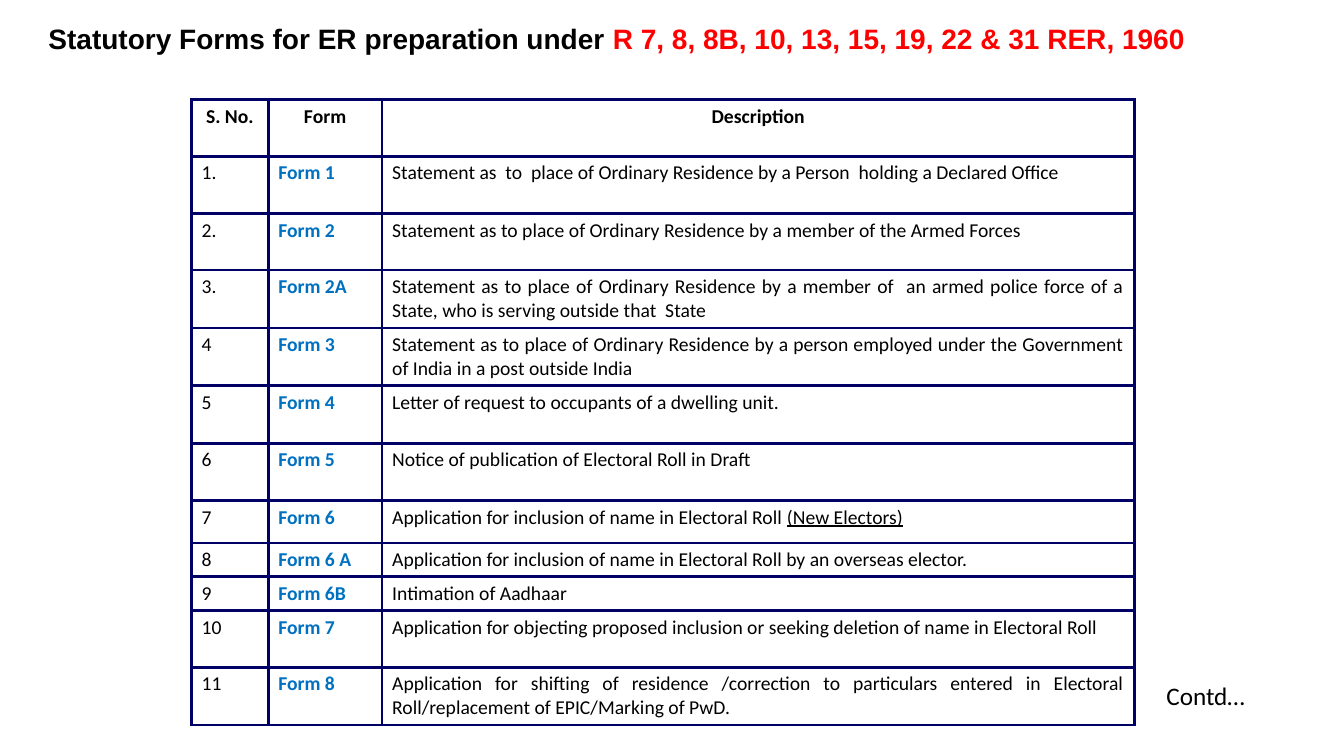
"""Build the slide of statutory forms for electoral roll preparation."""
from lxml import etree
from pptx import Presentation, util as u
from pptx.dml.color import RGBColor
from pptx.enum import text as t
from pptx.oxml.ns import qn

PX = 9144
COLORS = {"ink": "000000", "form": "0070C0", "rule": "000066", "rules": "FF0000"}
TITLE = [
    ("Statutory Forms for ER preparation under ", "ink"),
    ("R 7, 8, 8B, 10, 13, 15, 19, 22 & 31 RER, 1960", "rules"),
]
HEADS = ("S. No.", "Form", "Description")
FORMS = [
    ("1.", "Form 1", "Statement as  to  place of Ordinary Residence by a Person  holding a Declared Office"),
    ("2.", "Form 2", "Statement as to place of Ordinary Residence by a member of the Armed Forces"),
    ("3.", "Form 2A", "Statement as to place of Ordinary Residence by a member of  an armed police force "
     "of a State, who is serving outside that  State"),
    ("4", "Form 3", "Statement as to place of Ordinary Residence by a person employed under the "
     "Government of India in a post outside India"),
    ("5", "Form 4", "Letter of request to occupants of a dwelling unit."),
    ("6", "Form 5", "Notice of publication of Electoral Roll in Draft"),
    ("7", "Form 6", "Application for inclusion of name in Electoral Roll ", "(New Electors)"),
    ("8", "Form 6 A", "Application for inclusion of name in Electoral Roll by an overseas elector."),
    ("9", "Form 6B", "Intimation of Aadhaar"),
    ("10", "Form 7", "Application for objecting proposed inclusion or seeking deletion of name in "
     "Electoral Roll"),
    ("11", "Form 8", "Application for shifting of residence /correction to particulars entered in "
     "Electoral Roll/replacement of EPIC/Marking of PwD."),
]
MORE = "Contd…"
WIDTHS = (76, 113, 746)
HEIGHTS = (56, 57, 56, 57, 57, 57, 57, 42, 33, 33, 56, 57)


def box(*sides):
    return [u.Emu(side * PX) for side in sides]


def add_run(para, words, size, font="Calibri", color="ink", bold=False, under=False):
    run = para.add_run()
    run.text = words
    run.font.size = u.Pt(size)
    run.font.name = font
    run.font.bold = bold
    run.font.underline = under
    run.font.color.rgb = RGBColor.from_string(COLORS[color])


def rule_cell(cell):
    props = cell._tc.get_or_add_tcPr()
    for side in ("a:lnL", "a:lnR", "a:lnT", "a:lnB"):
        line = etree.SubElement(props, qn(side), w=str(u.Pt(2.25)))
        fill = etree.SubElement(line, qn("a:solidFill"))
        etree.SubElement(fill, qn("a:srgbClr"), val=COLORS["rule"])
    cell.fill.background()


def add_title(slide):
    title = slide.shapes.title
    title.left, title.top, title.width, title.height = box(38, 16, 1275, 44)
    frame = title.text_frame
    frame.auto_size = t.MSO_AUTO_SIZE.NONE
    frame.vertical_anchor = t.MSO_ANCHOR.MIDDLE
    para = frame.paragraphs[0]
    para.alignment = t.PP_ALIGN.JUSTIFY
    for words, color in TITLE:
        add_run(para, words, 20, "Arial", color, True)


def add_forms(slide):
    rows = [HEADS] + FORMS
    place = box(190, 99, sum(WIDTHS), sum(HEIGHTS))
    table = slide.shapes.add_table(len(rows), len(HEADS), *place).table
    table.first_row = table.horz_banding = False
    for col, width in zip(table.columns, box(*WIDTHS)):
        col.width = width
    for row, height in zip(table.rows, box(*HEIGHTS)):
        row.height = height
    for r, row in enumerate(rows):
        for c in range(len(HEADS)):
            cell = table.cell(r, c)
            rule_cell(cell)
            para = cell.text_frame.paragraphs[0]
            para.alignment = t.PP_ALIGN.JUSTIFY if r else t.PP_ALIGN.CENTER
            color = "form" if r and c == 1 else "ink"
            add_run(para, row[c], 14, color=color, bold=r == 0 or c == 1)
        for note in row[len(HEADS):]:
            add_run(para, note, 14, under=True)


def add_more(slide):
    frame = slide.shapes.add_textbox(*box(1147, 670, 100, 40)).text_frame
    frame.word_wrap = False
    add_run(frame.paragraphs[0], MORE, 18)


def main():
    deck = Presentation()
    deck.slide_width, deck.slide_height = box(1333, 750)
    slide = deck.slides.add_slide(deck.slide_layouts[5])
    add_forms(slide)
    add_title(slide)
    add_more(slide)
    deck.save("out.pptx")


if __name__ == "__main__":
    main()
